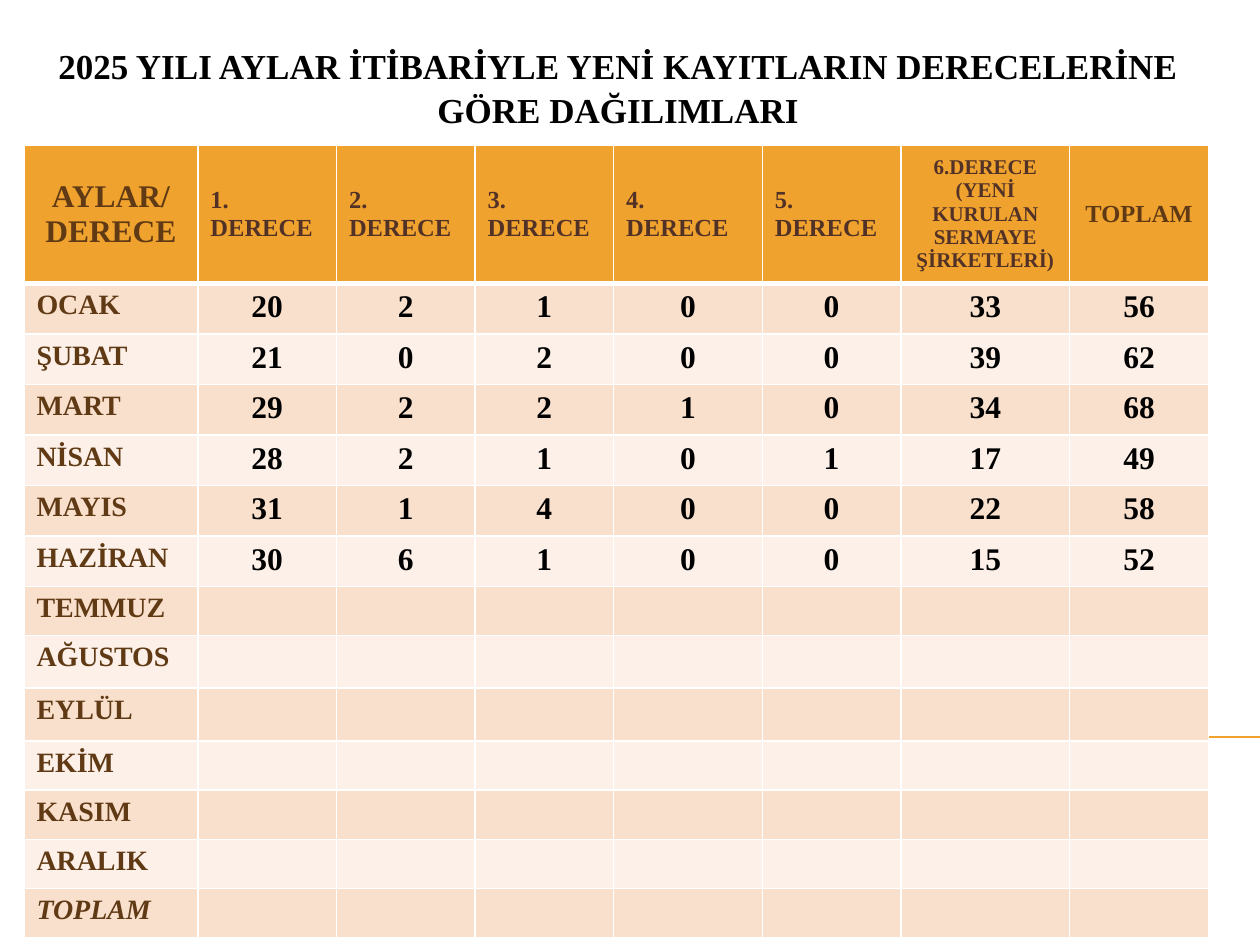
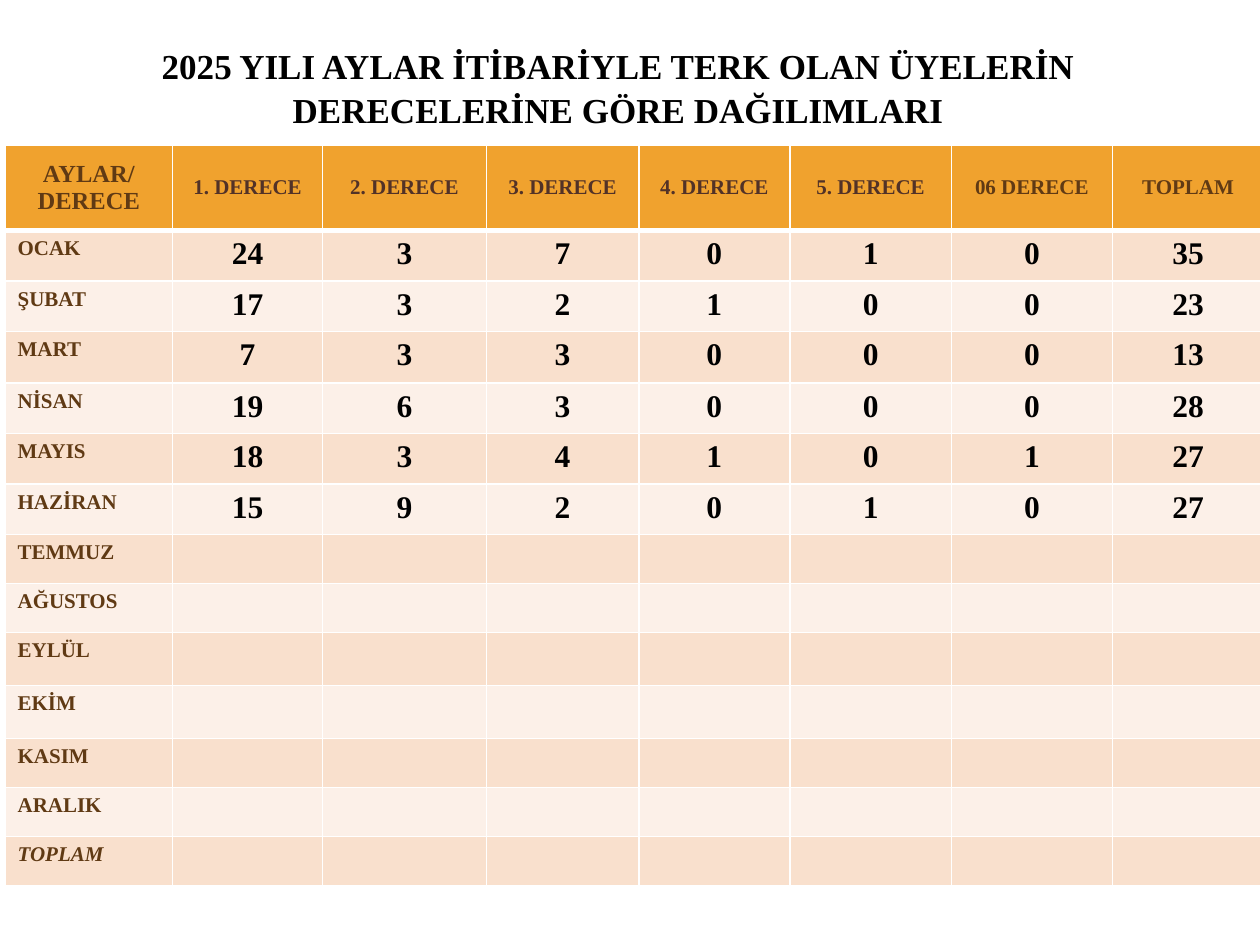
from lxml import etree
from pptx import Presentation
from pptx.dml.color import RGBColor
from pptx.enum import shapes, text
from pptx.oxml.ns import qn
from pptx.util import Inches, Pt

# Content
MONTHS = ["OCAK", "ŞUBAT", "MART", "NİSAN", "MAYIS", "HAZİRAN", "TEMMUZ",
          "AĞUSTOS", "EYLÜL", "EKİM", "KASIM", "ARALIK", "TOPLAM"]
GRADES = [f"{n}. DERECE" for n in range(1, 6)]
CORNER = "AYLAR/ DERECE"

# Each head entry: text, size, colour name, centred
PAGES = [
    dict(
        title="2025 YILI AYLAR İTİBARİYLE YENİ KAYITLARIN DERECELERİNE GÖRE DAĞILIMLARI",
        left=0.19, tall=0.63, size=16,
        cols=[1.38, 1.1, 1.1, 1.1, 1.18, 1.1, 1.34, 1.1],
        top=1.08, rows={"EYLÜL": 0.42, "AĞUSTOS": 0.42},
        head=[(CORNER, 18, "brown", True)]
        + [(g, 14, "dark", False) for g in GRADES]
        + [("6.DERECE (YENİ KURULAN SERMAYE ŞİRKETLERİ)", 12, "dark", True),
           ("TOPLAM", 14, "brown", True)],
        data=[(20, 2, 1, 0, 0, 33, 56),
              (21, 0, 2, 0, 0, 39, 62),
              (29, 2, 2, 1, 0, 34, 68),
              (28, 2, 1, 0, 1, 17, 49),
              (31, 1, 4, 0, 0, 22, 58),
              (30, 6, 1, 0, 0, 15, 52)]),
    dict(
        title="2025 YILI AYLAR İTİBARİYLE TERK OLAN ÜYELERİN DERECELERİNE GÖRE DAĞILIMLARI",
        left=0.04, tall=0.87, size=12,
        cols=[1.33, 1.19, 1.3, 1.21, 1.2, 1.28, 1.28, 1.2],
        top=0.68, rows={"MART": 0.41, "EYLÜL": 0.42, "EKİM": 0.42},
        head=[(CORNER, 14, "brown", True)]
        + [(g, 12, "dark", True) for g in GRADES]
        + [("06 DERECE", 12, "brown", True), ("TOPLAM", 12, "brown", True)],
        data=[(24, 3, 7, 0, 1, 0, 35),
              (17, 3, 2, 1, 0, 0, 23),
              (7, 3, 3, 0, 0, 0, 13),
              (19, 6, 3, 0, 0, 0, 28),
              (18, 3, 4, 1, 0, 1, 27),
              (15, 9, 2, 0, 1, 0, 27)]),
]

# Shared look
FONT = "Times New Roman"
COLORS = dict(brown="603A14", dark="523227", black="000000", white="FFFFFF",
              gold="F0A22E", peach="F9E0CD", cream="FCF0E8")
ROW = 0.39


def color(name):
    return RGBColor.from_string(COLORS[name])


def write(frame, words, size, ink, center=True, slant=False):
    frame.text = words
    para = frame.paragraphs[0]
    para.alignment = text.PP_ALIGN.CENTER if center else text.PP_ALIGN.LEFT
    for run in para.runs:
        font = run.font
        font.name, font.size, font.bold = FONT, Pt(size), True
        font.italic = slant or None
        font.color.rgb = color(ink)
    if not words:  # keeps an empty row from growing
        end = etree.SubElement(para._p, qn("a:endParaRPr"), sz=str(size * 100))
        etree.SubElement(end, qn("a:latin"), typeface=FONT)


def paint(cell, fill, **widths):
    cell.fill.solid()
    cell.fill.fore_color.rgb = color(fill)
    props = cell._tc.get_or_add_tcPr()
    for spot, side in enumerate("LRTB"):
        edge = etree.Element(qn(f"a:ln{side}"), w=str(Pt(widths.get(side, 1))))
        solid = etree.SubElement(edge, qn("a:solidFill"))
        etree.SubElement(solid, qn("a:srgbClr"), val=COLORS["white"])
        props.insert(spot, edge)


def add_rule(slide):
    rule = slide.shapes.add_connector(
        shapes.MSO_CONNECTOR.STRAIGHT,
        Inches(0.56), Inches(5.85), Inches(10), Inches(5.85))
    rule.line.color.rgb = color("gold")
    rule.line.width = Pt(0.75)
    etree.SubElement(rule._element.spPr, qn("a:effectLst"))


def add_title(slide, words, tall):
    box = slide.shapes.add_textbox(Inches(0.28), Inches(0.29),
                                   Inches(9.25), Inches(tall))
    box.text_frame.word_wrap = True
    write(box.text_frame, words, 20, "black")
    box.text_frame.paragraphs[0].line_spacing = 1.05


def add_grid(slide, page):
    highs = [page["top"]] + [page["rows"].get(m, ROW) for m in MONTHS]
    grid = slide.shapes.add_table(
        len(highs), len(page["cols"]), Inches(page["left"]), Inches(1.15),
        Inches(sum(page["cols"])), Inches(sum(highs))).table
    for col, wide in zip(grid.columns, page["cols"]):
        col.width = Inches(wide)
    for row, high in zip(grid.rows, highs):
        row.height = Inches(high)

    # Heading row
    for c, (words, size, ink, center) in enumerate(page["head"]):
        cell = grid.cell(0, c)
        cell.vertical_anchor = text.MSO_ANCHOR.MIDDLE
        write(cell.text_frame, words, size, ink, center)
        paint(cell, "gold", B=3)

    # Month rows, blank where there are no figures yet
    blank = [""] * (len(page["cols"]) - 1)
    for r, month in enumerate(MONTHS, 1):
        vals = page["data"][r - 1] if r <= len(page["data"]) else blank
        for c, val in enumerate([month, *vals]):
            cell = grid.cell(r, c)
            if c == 0:
                write(cell.text_frame, month, page["size"], "brown",
                      center=False, slant=month == "TOPLAM")
            else:
                write(cell.text_frame, str(val), 18 if val != "" else 12, "black")
            paint(cell, "peach" if r % 2 else "cream", T=3 if r == 1 else 1)


def main():
    deck = Presentation()
    deck.slide_width, deck.slide_height = Inches(10), Inches(7.5)
    for page in PAGES:
        slide = deck.slides.add_slide(deck.slide_layouts[6])
        add_rule(slide)
        add_title(slide, page["title"], page["tall"])
        add_grid(slide, page)
    deck.save("out.pptx")


if __name__ == "__main__":
    main()
